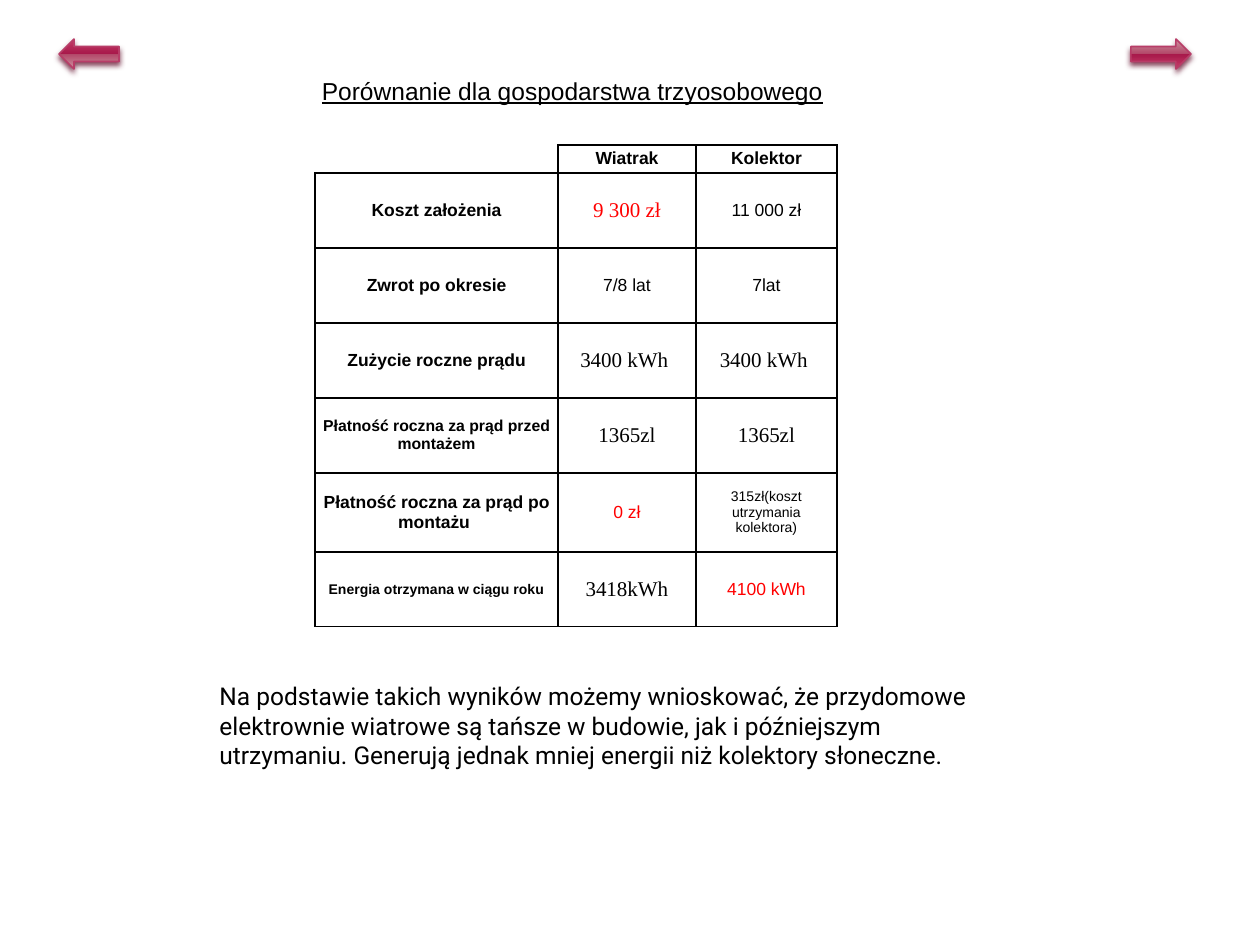
from lxml import etree
from pptx import Presentation, util as u
from pptx.dml.color import RGBColor
from pptx.enum import shapes, text
from pptx.oxml import parse_xml
from pptx.oxml.ns import nsdecls, qn

PX = 914400 // 126
BLACK, RED = "000000", "FF0000"
HEAD = dict(size=10, bold=True)
SANS = dict(size=10)
SERIF = dict(size=12, font="Times New Roman")

TITLE = "Porównanie dla gospodarstwa trzyosobowego"
SUMMARY = ("Na podstawie takich wyników możemy wnioskować, że przydomowe elektrownie "
           "wiatrowe są tańsze w budowie, jak i późniejszym utrzymaniu. Generują jednak "
           "mniej energii niż kolektory słoneczne.")
ROWS = [
    (28, ("", HEAD), ("Wiatrak", HEAD), ("Kolektor", HEAD)),
    (75, ("Koszt założenia", HEAD), ("9 300 zł", dict(SERIF, color=RED)), ("11 000 zł", SANS)),
    (75, ("Zwrot po okresie", HEAD), ("7/8 lat", SANS), ("7lat", SANS)),
    (75, ("Zużycie roczne prądu", HEAD), ("3400 kWh ", SERIF), ("3400 kWh ", SERIF)),
    (75, ("Płatność roczna za prąd przed montażem", dict(HEAD, size=9)),
     ("1365zl", SERIF), ("1365zl", SERIF)),
    (79, ("Płatność roczna za prąd po montażu ", HEAD), ("0 zł", dict(SANS, color=RED)),
     ("315zł(koszt utrzymania kolektora)", dict(SANS, size=8))),
    (75, ("Energia otrzymana w ciągu roku", dict(HEAD, size=8)),
     ("3418kWh", SERIF), ("4100 kWh", dict(SANS, color=RED))),
]
COLUMNS = [243, 138, 141]
ARROWS = [(1131, 0), (59, 180)]
GRADIENT = [(0, "CE94A2"), (49, "B34869"), (49, "A61749"), (92, "C13764"), (100, "CA5D7C")]


def px(*values):
    return [value * PX for value in values]


def rgb(value):
    return RGBColor.from_string(value)


def write(frame, content, size=10, font="Arial", color=BLACK, bold=False,
          underline=None, align=text.PP_ALIGN.CENTER):
    para = frame.paragraphs[0]
    para.alignment = align
    if not content:
        etree.SubElement(para._p, qn("a:endParaRPr"), sz=str(size * 100))
        return
    span = para.add_run()
    span.text = content
    span.font.size = u.Pt(size)
    span.font.name = font
    span.font.bold = bold
    span.font.underline = underline
    span.font.color.rgb = rgb(color)


def add_borders(cell, hidden=()):
    for side in "LRTB":
        paint = ("<a:noFill/>" if side in hidden else
                 f'<a:solidFill><a:srgbClr val="{BLACK}"/></a:solidFill>')
        cell._tc.get_or_add_tcPr().append(parse_xml(
            f'<a:ln{side} {nsdecls("a")} w="12700">{paint}</a:ln{side}>'))


def add_table(page):
    heights = [row[0] for row in ROWS]
    table = page.shapes.add_table(len(ROWS), len(COLUMNS),
                                  *px(315, 145, sum(COLUMNS), sum(heights))).table
    table.first_row = table.horz_banding = False
    for column, width in zip(table.columns, COLUMNS):
        column.width = width * PX
    for r, (height, *entries) in enumerate(ROWS):
        table.rows[r].height = height * PX
        for c, (content, style) in enumerate(entries):
            cell = table.cell(r, c)
            cell.margin_left = cell.margin_right = 6 * PX
            cell.margin_top = cell.margin_bottom = 0
            cell.vertical_anchor = text.MSO_ANCHOR.MIDDLE
            add_borders(cell, "" if content else "LT")
            cell.fill.background()
            write(cell.text_frame, content, **style)


def add_arrow(page, left, rotation):
    arrow = page.shapes.add_shape(shapes.MSO_SHAPE.RIGHT_ARROW, *px(left, 39, 60, 30))
    arrow.rotation = rotation
    arrow.line.color.rgb = rgb("B83D68")
    arrow.line.width = u.Pt(0.9)
    arrow.fill.gradient()
    arrow.shadow.inherit = False
    properties = arrow._element.spPr
    stops = "".join(f'<a:gs pos="{position * 1000}"><a:srgbClr val="{color}"/></a:gs>'
                    for position, color in GRADIENT)
    properties.replace(properties.find(qn("a:gradFill")), parse_xml(
        f'<a:gradFill {nsdecls("a")} rotWithShape="1"><a:gsLst>{stops}</a:gsLst>'
        '<a:lin ang="5400000" scaled="0"/></a:gradFill>'))
    properties.find(qn("a:effectLst")).append(parse_xml(
        f'<a:outerShdw {nsdecls("a")} blurRad="39370" dist="25400" dir="5400000" '
        'rotWithShape="0"><a:srgbClr val="722640"><a:alpha val="83000"/></a:srgbClr>'
        '</a:outerShdw>'))


def main():
    deck = Presentation()
    deck.slide_width, deck.slide_height = px(1260, 945)
    page = deck.slides.add_slide(deck.slide_layouts[5])

    title = page.shapes.title
    title.left, title.top, title.width, title.height = px(308, 69, 529, 43)
    title.text_frame.word_wrap = False
    title.text_frame.vertical_anchor = text.MSO_ANCHOR.MIDDLE
    write(title.text_frame, TITLE, size=14, underline=True)

    add_table(page)

    box = page.shapes.add_textbox(*px(207, 675, 816, 102))
    box.text_frame.word_wrap = True
    write(box.text_frame, SUMMARY, size=14, font="Roboto", align=text.PP_ALIGN.LEFT)

    for left, rotation in ARROWS:
        add_arrow(page, left, rotation)
    deck.save("out.pptx")


if __name__ == "__main__":
    main()
